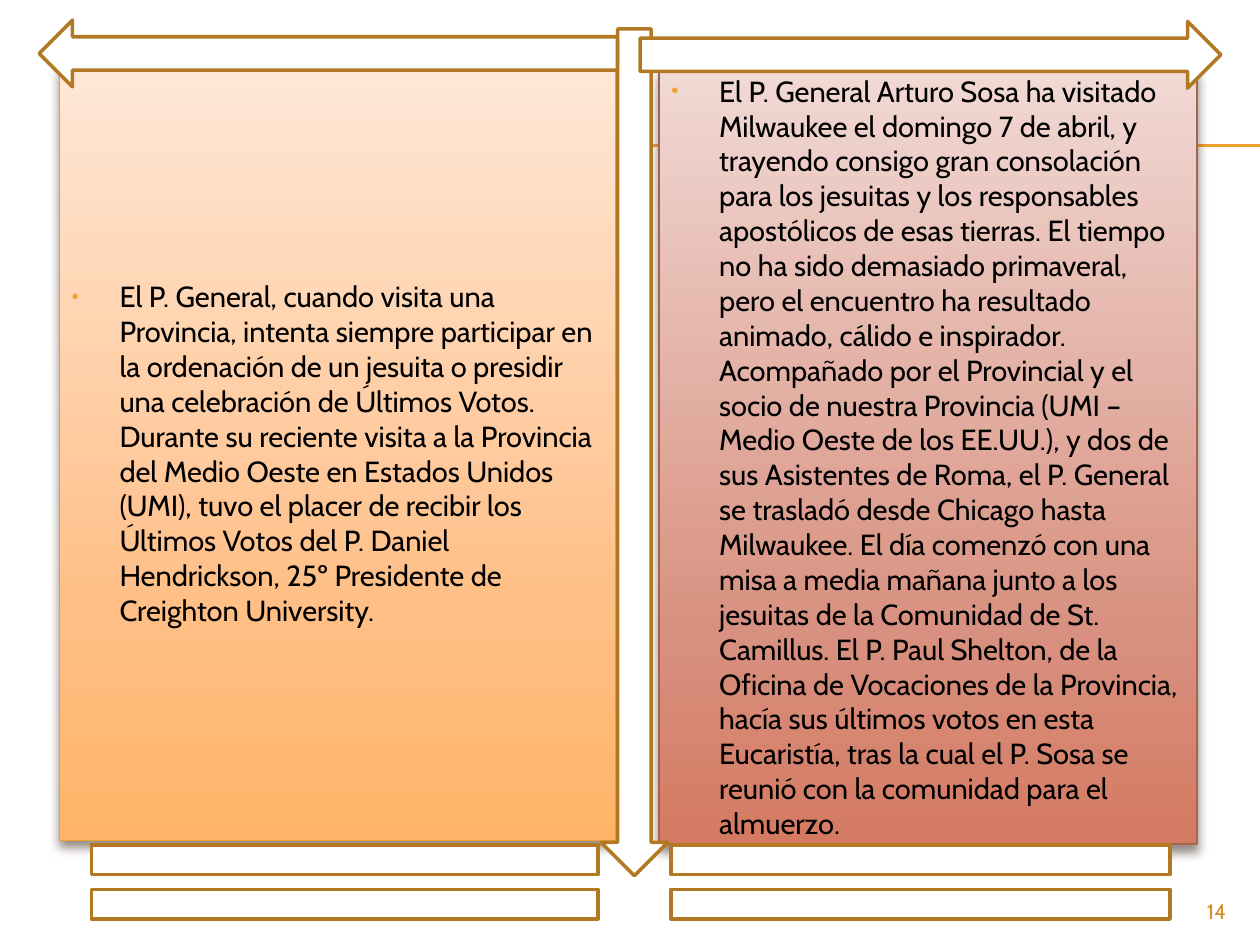
from copy import deepcopy
from pptx import Presentation, util as u
from pptx.dml.color import RGBColor as RGB
from pptx.enum import shapes, text
from pptx.oxml import parse_xml
from pptx.oxml.ns import nsdecls, qn

THEME = dict(
    font="Cabin", body=16.6, small=12, text="000000", number="D48F29",
    accent="F0A22E", outline="B27822", paper="FFFFFF", shadow="4E3B30",
    orange=("FFE7D7", "FFBE84", "FFB468"), red=("F1D9D4", "D89180", "D47A62"),
    red_line="A5644E", stops=(0, 0.72, 1),
)
COLS, ROWS = 100, 75

prs = Presentation()
prs.slide_width, prs.slide_height = u.Inches(10), u.Inches(7.5)
s = prs.slides.add_slide(prs.slide_layouts[6])
MSO = shapes.MSO_SHAPE


def grid(x, y, w, h):
    """Turn grid columns and rows into slide lengths."""
    cw, rh = prs.slide_width / COLS, prs.slide_height / ROWS
    return [round(v) for v in (x * cw, y * rh, w * cw, h * rh)]


def write(tf, words, frame, para, font, color, bullet=()):
    """Fill a text frame with one formatted paragraph."""
    p = tf.paragraphs[0]
    for xml in bullet:
        p._p.get_or_add_pPr().append(parse_xml(xml))
    r = p.add_run()
    r.text = words
    for target, values in ((tf, frame), (p, para), (r.font, font)):
        for name, value in values.items():
            setattr(target, name, value)
    r.font.color.rgb = RGB.from_string(color)


# Double rule behind the panels
for row in (11.5, 11.6):
    x, y, w, _ = grid(5.6, row, 94.4, 0)
    rule = s.shapes.add_connector(shapes.MSO_CONNECTOR.STRAIGHT, x, y, x + w, y)
    rule.line.color.rgb = RGB.from_string(THEME["accent"])
    rule.line.width = u.Pt(0.75)
    rule._element.spPr.append(parse_xml(f'<a:effectLst {nsdecls("a")}/>'))

# Text panels
PANELS = [
    ((4.7, 5.2, 44.2, 61.5), THEME["orange"], THEME["accent"],
     "El P. General, cuando visita una Provincia, intenta siempre participar en la "
     "ordenación de un jesuita o presidir una celebración de Últimos Votos. Durante su "
     "reciente visita a la Provincia del Medio Oeste en Estados Unidos (UMI), tuvo el "
     "placer de recibir los Últimos Votos del P. Daniel Hendrickson, 25º Presidente de "
     "Creighton University."),
    ((52.3, 5.5, 42.7, 61.5), THEME["red"], THEME["red_line"],
     "El P. General Arturo Sosa ha visitado Milwaukee el domingo 7 de abril, y trayendo "
     "consigo gran consolación para los jesuitas y los responsables apostólicos de esas "
     "tierras. El tiempo no ha sido demasiado primaveral, pero el encuentro ha resultado "
     "animado, cálido e inspirador. Acompañado por el Provincial y el socio de nuestra "
     "Provincia (UMI – Medio Oeste de los EE.UU.), y dos de sus Asistentes de Roma, el "
     "P. General se trasladó desde Chicago hasta Milwaukee. El día comenzó con una misa a "
     "media mañana junto a los jesuitas de la Comunidad de St. Camillus. El P. Paul "
     "Shelton, de la Oficina de Vocaciones de la Provincia, hacía sus últimos votos en "
     "esta Eucaristía, tras la cual el P. Sosa se reunió con la comunidad para el "
     "almuerzo."),
]
BULLET = (
    f'<a:buClr {nsdecls("a")}><a:srgbClr val="{THEME["accent"]}"/></a:buClr>',
    f'<a:buSzPct {nsdecls("a")} val="70000"/>',
    f'<a:buFont {nsdecls("a")} typeface="Arial"/>',
    f'<a:buChar {nsdecls("a")} char="•"/>',
)
SHADOW = (
    f'<a:outerShdw {nsdecls("a")} blurRad="{u.Pt(6)}" dist="{u.Pt(4)}" dir="5400000" '
    f'rotWithShape="0"><a:srgbClr val="{THEME["shadow"]}"><a:alpha val="60000"/>'
    '</a:srgbClr></a:outerShdw>'
)
for box, colors, edge, words in PANELS:
    sp = s.shapes.add_shape(MSO.RECTANGLE, *grid(*box))
    sp.fill.gradient()
    sp.fill.gradient_angle = 270
    stops = sp._element.spPr.find(".//" + qn("a:gsLst"))
    stops.append(deepcopy(stops[-1]))
    for stop, color, place in zip(sp.fill.gradient_stops, colors, THEME["stops"]):
        stop.color.rgb = RGB.from_string(color)
        stop.position = place
    sp.line.color.rgb = RGB.from_string(edge)
    sp.line.width = u.Pt(0.79)
    sp.shadow.inherit = False
    sp._element.spPr.find(qn("a:effectLst")).append(parse_xml(SHADOW))
    write(sp.text_frame, words,
          dict(word_wrap=True, vertical_anchor=text.MSO_ANCHOR.MIDDLE),
          dict(alignment=text.PP_ALIGN.LEFT),
          dict(name=THEME["font"], size=u.Pt(THEME["body"])), THEME["text"], BULLET)
    pPr = sp.text_frame.paragraphs[0]._p.pPr
    pPr.set("marL", str(u.Inches(0.38)))
    pPr.set("indent", str(-u.Inches(0.38)))

# Outlined arrows and double bars framing the panels
for kind, box in (
    (MSO.DOWN_ARROW, (47.7, 2.3, 5.3, 67.2)),
    (MSO.RIGHT_ARROW, (50.8, 1.7, 46.1, 5.3)),
    (MSO.LEFT_ARROW, (3.1, 1.6, 45.9, 5.3)),
    (MSO.MATH_EQUAL, (0, 65, 54.7, 10)),
    (MSO.MATH_EQUAL, (46.1, 65, 53.9, 10)),
):
    sp = s.shapes.add_shape(kind, *grid(*box))
    sp.shadow.inherit = False
    sp.fill.solid()
    sp.fill.fore_color.rgb = RGB.from_string(THEME["paper"])
    sp.line.color.rgb = RGB.from_string(THEME["outline"])
    sp.line.width = u.Pt(2)

# Slide number
tb = s.shapes.add_textbox(*grid(90, 70.8, 8.3, 2.7))
write(tb.text_frame, "14", dict(word_wrap=True), dict(alignment=text.PP_ALIGN.RIGHT),
      dict(name=THEME["font"], size=u.Pt(THEME["small"])), THEME["number"])

prs.save("out.pptx")
